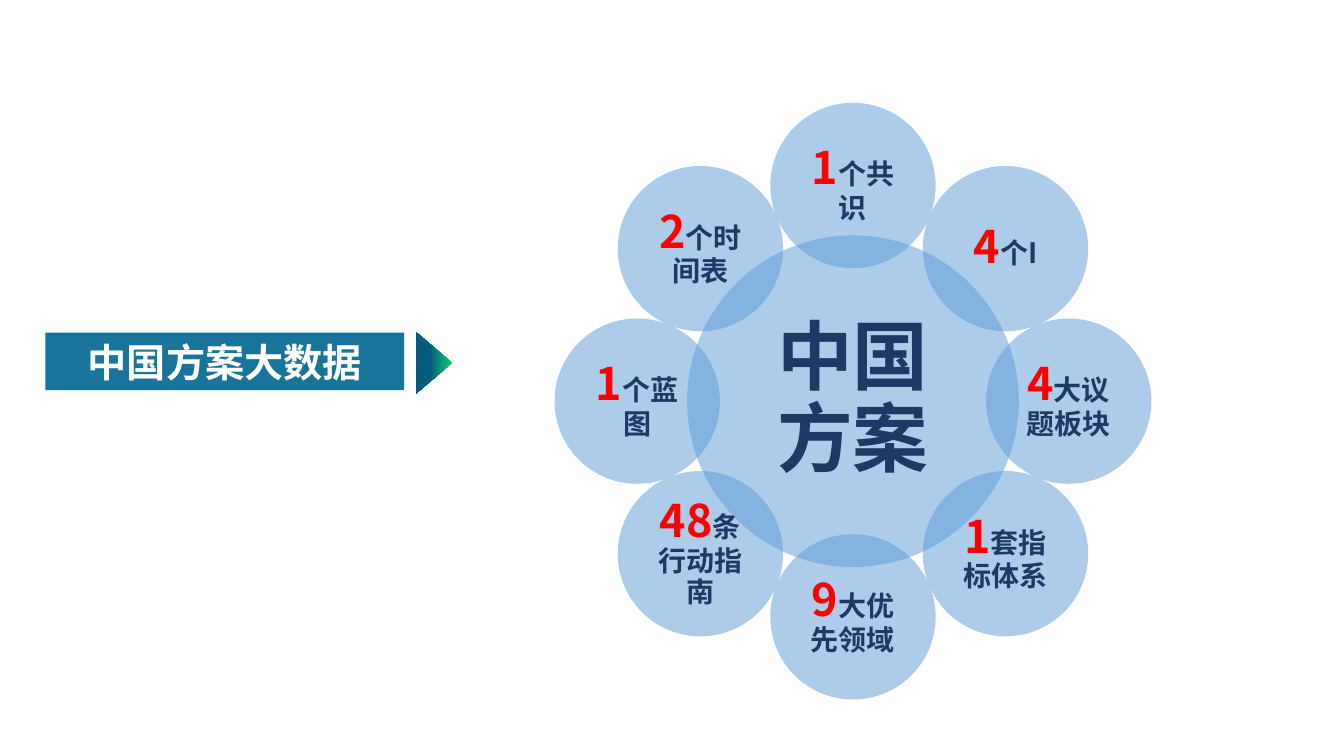
from math import cos, radians, sin

from pptx import Presentation
from pptx.dml.color import RGBColor
from pptx.enum.shapes import MSO_SHAPE as Shape
from pptx.enum.text import MSO_ANCHOR as Anchor, MSO_AUTO_SIZE as AutoSize, PP_ALIGN as Align
from pptx.oxml.ns import qn
from pptx.util import Inches, Pt

FONT = "Noto Sans CJK SC"
WHITE = RGBColor(0xFF, 0xFF, 0xFF)
RED = RGBColor(0xFF, 0x00, 0x00)
NAVY = RGBColor(0x20, 0x38, 0x64)
BLUE = RGBColor(0x5B, 0x9B, 0xD5)
TEAL = RGBColor(0x18, 0x74, 0x9A)
DARK_TEAL = RGBColor(0x03, 0x5C, 0x7D)
GREEN = RGBColor(0x14, 0xCD, 0x68)

CENTER_X, CENTER_Y = 8.46, 3.98
RING_RADIUS = 2.14
HUB_SIZE, PETAL_SIZE = 3.29, 1.64
PETALS = [
    ("1", "个共识"),
    ("4", "个I"),
    ("4", "大议题板块"),
    ("1", "套指标体系"),
    ("9", "大优先领域"),
    ("48", "条行动指南"),
    ("1", "个蓝图"),
    ("2", "个时间表"),
]


class SlideBuilder:
    def __init__(self, slide):
        self.slide = slide

    def shape(self, kind, left, top, width, height):
        shape = self.slide.shapes.add_shape(
            kind, Inches(left), Inches(top), Inches(width), Inches(height))
        shape.shadow.inherit = False
        shape.line.fill.background()
        return shape

    def add_text(self, shape, runs):
        frame = shape.text_frame
        frame.word_wrap = True
        frame.vertical_anchor = Anchor.MIDDLE
        paragraph = frame.paragraphs[0]
        paragraph.alignment = Align.CENTER
        for text, size, color in runs:
            run = paragraph.add_run()
            run.text = text
            run.font.size = Pt(size)
            run.font.bold = True
            run.font.color.rgb = color
            run.font.name = FONT
            properties = run._r.get_or_add_rPr()
            east_asian = properties.makeelement(qn("a:ea"), {"typeface": FONT})
            properties.find(qn("a:latin")).addnext(east_asian)
        return paragraph

    def banner(self, left, top, width, height, text):
        shape = self.shape(Shape.RECTANGLE, left, top, width, height)
        shape.fill.solid()
        shape.fill.fore_color.rgb = TEAL
        self.add_text(shape, [(text, 28, WHITE)])
        shape.text_frame.auto_size = AutoSize.SHAPE_TO_FIT_TEXT

    def pointer(self, left, top, width, height):
        shape = self.shape(Shape.ISOSCELES_TRIANGLE, left, top, width, height)
        shape.rotation = 90
        shape.fill.gradient()
        shape.fill.gradient_angle = 270
        for stop, position, color in zip(
                shape.fill.gradient_stops, (0, 0.61), (GREEN, DARK_TEAL)):
            stop.position = position
            stop.color.rgb = color

    def circle(self, center_x, center_y, size, inset, runs):
        shape = self.shape(
            Shape.OVAL, center_x - size / 2, center_y - size / 2, size, size)
        shape.fill.solid()
        shape.fill.fore_color.rgb = BLUE
        color = shape._element.spPr.find(qn("a:solidFill"))[0]
        color.append(color.makeelement(qn("a:alpha"), {"val": "50000"}))
        frame = shape.text_frame
        frame.margin_left = frame.margin_right = Inches(inset)
        frame.margin_top = frame.margin_bottom = Inches(inset)
        paragraph = self.add_text(shape, runs)
        paragraph.line_spacing = 0.9
        properties = paragraph._p.get_or_add_pPr()
        space_after = properties.makeelement(qn("a:spcAft"), {})
        space_after.append(properties.makeelement(qn("a:spcPct"), {"val": "35000"}))
        properties.append(space_after)


def main():
    presentation = Presentation()
    presentation.slide_width = Inches(13.33)
    presentation.slide_height = Inches(7.5)
    builder = SlideBuilder(presentation.slides.add_slide(presentation.slide_layouts[6]))

    builder.pointer(4, 3.42, 0.61, 0.36)
    builder.banner(0.45, 3.3, 3.56, 0.57, "中国方案大数据")
    builder.circle(CENTER_X, CENTER_Y, HUB_SIZE, 0.07, [("中国方案", 54, NAVY)])
    for index, (number, label) in enumerate(PETALS):
        angle = radians(360 / len(PETALS) * index)
        builder.circle(
            CENTER_X + RING_RADIUS * sin(angle),
            CENTER_Y - RING_RADIUS * cos(angle),
            PETAL_SIZE, 0.04, [(number, 32, RED), (label, 20, NAVY)])

    presentation.save("out.pptx")


if __name__ == "__main__":
    main()
